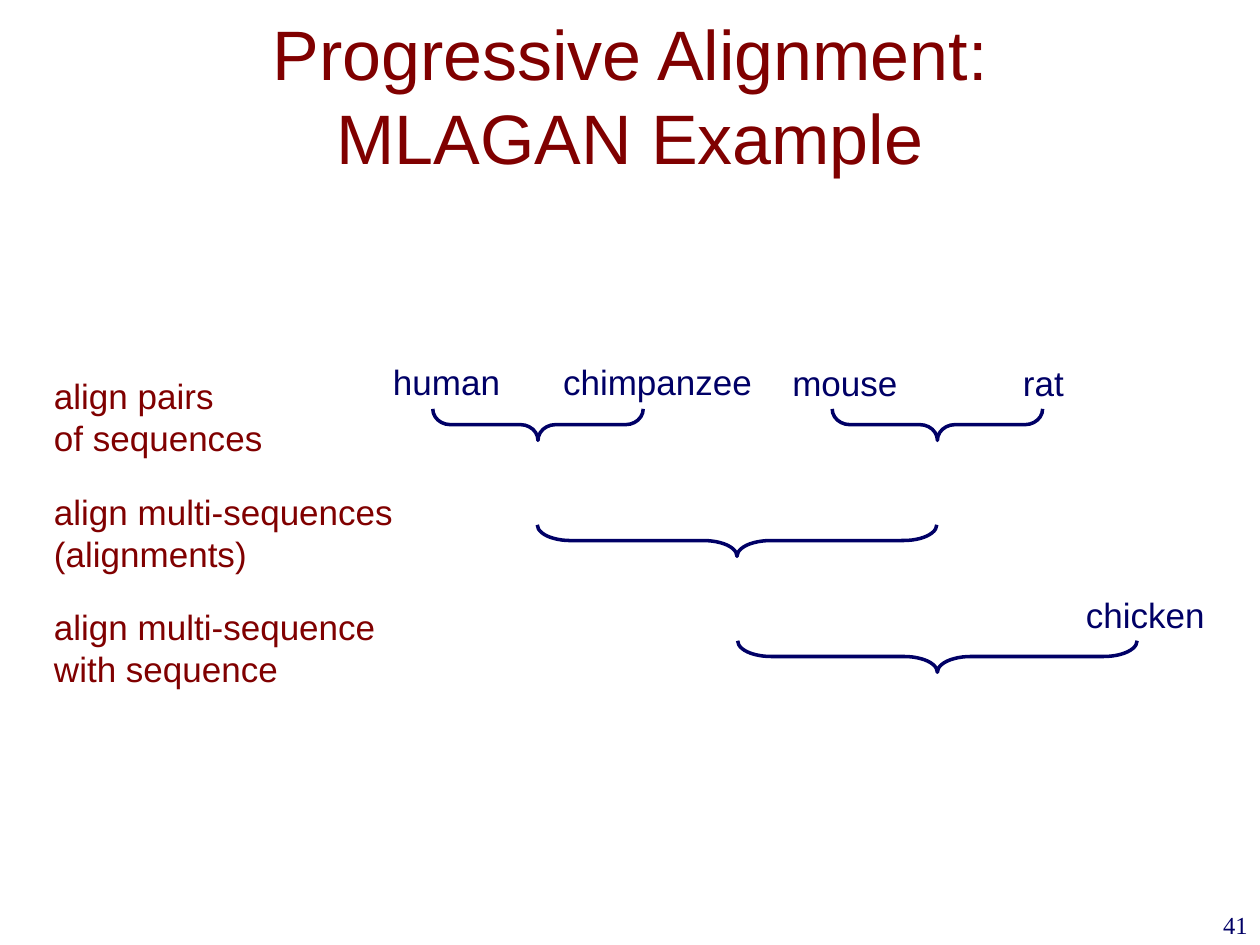
from pptx import Presentation
from pptx.dml.color import RGBColor
from pptx.enum.shapes import MSO_SHAPE as Shape
from pptx.enum.text import MSO_ANCHOR as Anchor, MSO_AUTO_SIZE as Fit, PP_ALIGN as Align
from pptx.util import Inches, Pt

NAVY = RGBColor(0x00, 0x00, 0x66)
MAROON = RGBColor(0x80, 0x00, 0x00)

# Three alignment steps, evenly spaced down the slide
STEP_TOP, BRACE_Y, STEP_GAP = 2.92, 3.37, 0.92
DEPTH = 0.25
STEPS = [
    ("align pairs\nof sequences", 1.87),
    ("align multi-sequences\n(alignments)", 2.91),
    ("align multi-sequence\nwith sequence", 2.79),
]
# Species: name, left, top, width
SPECIES = [
    ("human", 3.02, 2.81, 1.06),
    ("chimpanzee", 4.37, 2.81, 1.71),
    ("mouse", 6.19, 2.82, 1.04),
    ("rat", 8.02, 2.82, 0.53),
    ("chicken", 8.52, 4.66, 1.15),
]
# Braces: step, centre, span, curve
BRACES = [
    (0, 4.27, 1.67, 0.556),
    (0, 7.44, 1.67, 0.556),
    (1, 5.85, 3.17, 1.056),
    (2, 7.44, 3.17, 1.056),
]


def style(frame, size, color, face="Arial", align=Align.LEFT):
    for para in frame.paragraphs:
        para.alignment = align
        for run in para.runs:
            run.font.size = Pt(size)
            run.font.name = face
            run.font.color.rgb = color


def add_title(slide, text):
    title = slide.shapes.title
    title.left, title.top = Inches(0.75), Inches(0.25)
    title.width, title.height = Inches(8.5), Inches(1)
    frame = title.text_frame
    frame.text = text
    frame.auto_size = Fit.NONE
    frame.vertical_anchor = Anchor.MIDDLE
    style(frame, 40, MAROON, align=Align.CENTER)


def add_label(slide, text, left, top, width, height, color):
    box = slide.shapes.add_textbox(
        Inches(left), Inches(top), Inches(width), Inches(height))
    frame = box.text_frame
    frame.text = text
    frame.word_wrap = False
    frame.auto_size = Fit.SHAPE_TO_FIT_TEXT
    style(frame, 20, color)


def add_brace(slide, step, center, span, curve):
    # A left brace turned to point down
    mid = BRACE_Y + step * STEP_GAP
    brace = slide.shapes.add_shape(
        Shape.LEFT_BRACE, Inches(center - DEPTH / 2), Inches(mid - span / 2),
        Inches(DEPTH), Inches(span))
    brace.rotation = 270
    brace.adjustments[0] = curve
    brace.adjustments[1] = 0.5
    brace.shadow.inherit = False
    brace.fill.background()
    brace.line.color.rgb = NAVY
    brace.line.width = Pt(2)


def add_number(slide, text):
    box = slide.shapes.add_textbox(
        Inches(7.92), Inches(7.17), Inches(2.08), Inches(0.5))
    frame = box.text_frame
    frame.text = text
    frame.word_wrap = True
    style(frame, 14, NAVY, "Times New Roman", Align.RIGHT)


def main():
    deck = Presentation()
    deck.slide_width, deck.slide_height = Inches(10), Inches(7.5)
    slide = deck.slides.add_slide(deck.slide_layouts[5])

    add_title(slide, "Progressive Alignment:\vMLAGAN Example")
    for row, (text, width) in enumerate(STEPS):
        add_label(slide, text, 0.33, STEP_TOP + row * STEP_GAP, width, 0.77, MAROON)
    for name, left, top, width in SPECIES:
        add_label(slide, name, left, top, width, 0.44, NAVY)
    for brace in BRACES:
        add_brace(slide, *brace)
    add_number(slide, "41")

    deck.save("out.pptx")


if __name__ == "__main__":
    main()
